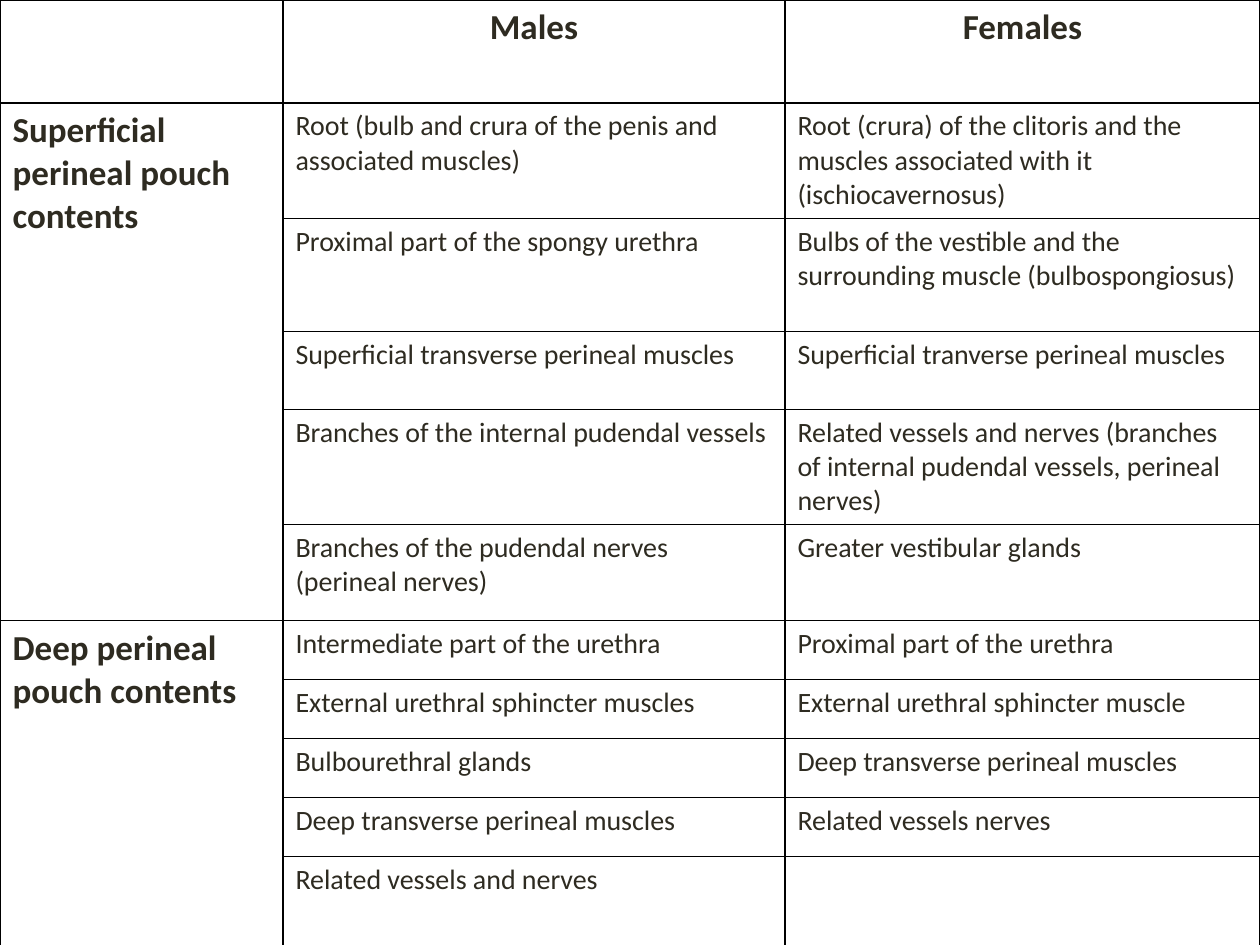
import lxml.etree
import pptx
import pptx.dml.color
import pptx.enum.text
import pptx.oxml.ns
import pptx.util

EMU_PER_PX = 914400 // 126
INK = pptx.dml.color.RGBColor(0x2E, 0x2B, 0x21)
BORDER = pptx.dml.color.RGBColor(0x00, 0x00, 0x00)
FONT = "Calibri"
HEADING_SIZE, BODY_SIZE = 20, 16

COLUMN_WIDTHS = [283, 502, 475]
ROW_HEIGHTS = [103, 113, 113, 78, 113, 96, 59, 59, 59, 59, 95]

HEADERS = ["Males", "Females"]
POUCHES = [
    ("Superficial perineal pouch contents", [
        ("Root (bulb and crura of the penis and associated muscles)",
         "Root (crura) of the clitoris and the muscles associated with it (ischiocavernosus)"),
        ("Proximal part of the spongy urethra",
         "Bulbs of the vestible and the surrounding muscle (bulbospongiosus)"),
        ("Superficial transverse perineal muscles",
         "Superficial tranverse perineal muscles"),
        ("Branches of the internal pudendal vessels",
         "Related vessels and nerves (branches of internal pudendal vessels, perineal nerves)"),
        ("Branches of the pudendal nerves (perineal nerves)",
         "Greater vestibular glands"),
    ]),
    ("Deep perineal pouch contents", [
        ("Intermediate part of the urethra", "Proximal part of the urethra"),
        ("External urethral sphincter muscles", "External urethral sphincter muscle"),
        ("Bulbourethral glands", "Deep transverse perineal muscles"),
        ("Deep transverse perineal muscles", "Related vessels nerves"),
        ("Related vessels and nerves", ""),
    ]),
]


def px(length):
    return pptx.util.Emu(length * EMU_PER_PX)


def write_cell(cell, text, heading=False, align=pptx.enum.text.PP_ALIGN.LEFT):
    cell.text = text
    paragraph = cell.text_frame.paragraphs[0]
    paragraph.alignment = align
    paragraph.font.name = FONT
    paragraph.font.size = pptx.util.Pt(HEADING_SIZE if heading else BODY_SIZE)
    paragraph.font.bold = heading
    paragraph.font.color.rgb = INK


def style_cell(cell):
    """Clear the fill and draw a 1 pt line on all four sides."""
    cell.fill.background()
    properties = cell._tc.get_or_add_tcPr()
    qn = pptx.oxml.ns.qn
    for position, side in enumerate(("a:lnL", "a:lnR", "a:lnT", "a:lnB")):
        line = lxml.etree.Element(qn(side), w=str(pptx.util.Pt(1)))
        fill = lxml.etree.SubElement(line, qn("a:solidFill"))
        lxml.etree.SubElement(fill, qn("a:srgbClr"), val=str(BORDER))
        properties.insert(position, line)


def add_pouch_table(slide, left, top):
    frame = slide.shapes.add_table(
        len(ROW_HEIGHTS), len(COLUMN_WIDTHS), px(left), px(top),
        px(sum(COLUMN_WIDTHS)), px(sum(ROW_HEIGHTS)))
    table = frame.table
    table.first_row = table.horz_banding = False
    for column, width in zip(table.columns, COLUMN_WIDTHS):
        column.width = px(width)
    for row, height in zip(table.rows, ROW_HEIGHTS):
        row.height = px(height)
    for cell in table.iter_cells():
        style_cell(cell)

    # Column headings
    for column, header in enumerate(HEADERS, start=1):
        write_cell(table.cell(0, column), header, heading=True,
                   align=pptx.enum.text.PP_ALIGN.CENTER)

    # One merged heading and its contents for each pouch
    row = 1
    for pouch, contents in POUCHES:
        heading = table.cell(row, 0)
        heading.merge(table.cell(row + len(contents) - 1, 0))
        write_cell(heading, pouch, heading=True)
        for entries in contents:
            for column, entry in enumerate(entries, start=1):
                write_cell(table.cell(row, column), entry)
            row += 1


def main():
    presentation = pptx.Presentation()
    presentation.slide_width = px(1260)
    presentation.slide_height = px(945)
    slide = presentation.slides.add_slide(presentation.slide_layouts[6])
    add_pouch_table(slide, 0, 0)
    presentation.save("out.pptx")


if __name__ == "__main__":
    main()
